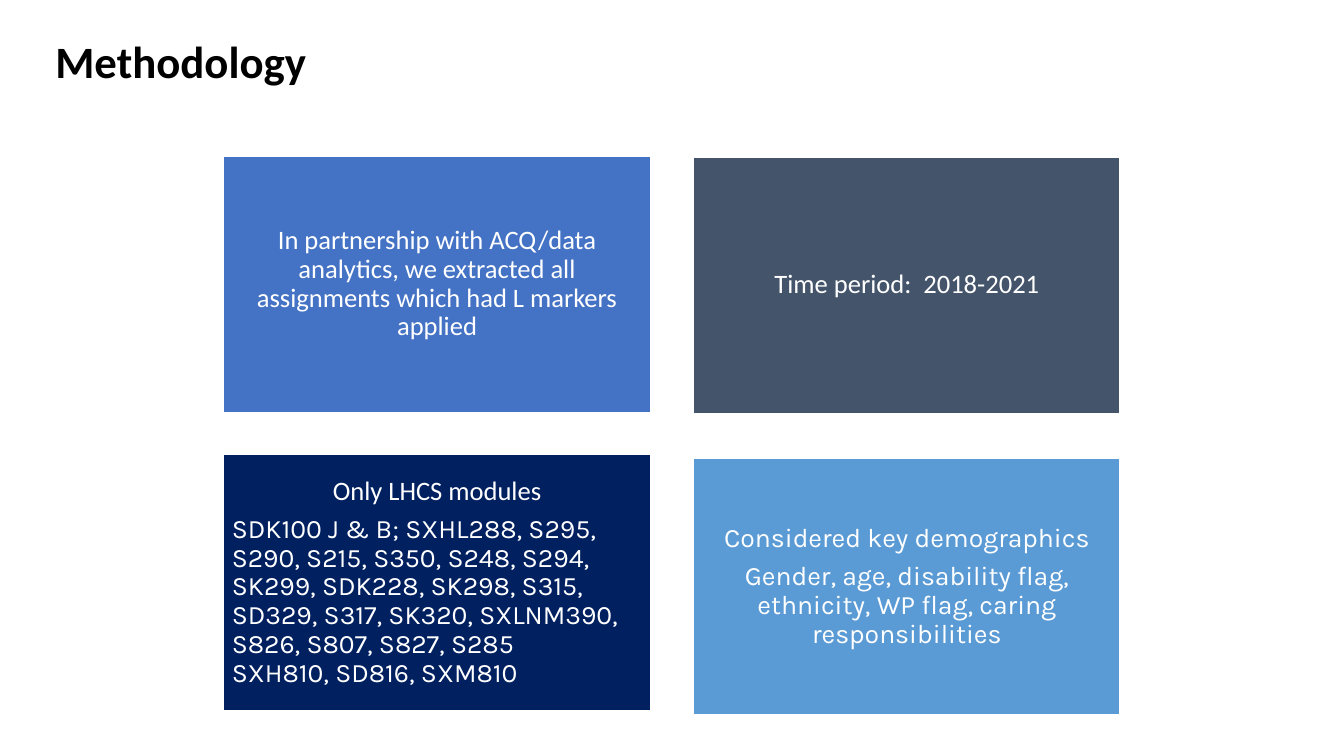
from dataclasses import dataclass

from pptx import Presentation
from pptx import util as u
from pptx.dml.color import RGBColor
from pptx.enum import shapes, text


@dataclass(frozen=True)
class Theme:
    ink: str = "000000"
    white: str = "FFFFFF"
    blue: str = "4472C4"
    slate: str = "44546A"
    navy: str = "002060"
    sky: str = "5B9BD5"
    main_font: str = "Calibri"
    alt_font: str = "Karla"
    title_size: float = 32
    body_size: float = 19


class Deck:
    def __init__(self, prs, theme):
        self.theme = theme
        self.s = prs.slides.add_slide(prs.slide_layouts[6])

    def style(self, p, font, size, color, bold=False):
        for r in p.runs:
            r.font.name = font
            r.font.size = u.Pt(size)
            r.font.bold = bold
            r.font.color.rgb = RGBColor.from_string(color)

    def title(self, words, left, top, width, height):
        sp = self.s.shapes.add_textbox(*map(u.Inches, (left, top, width, height)))
        tf = sp.text_frame
        tf.word_wrap = False
        tf.auto_size = text.MSO_AUTO_SIZE.SHAPE_TO_FIT_TEXT
        tf.text = words
        t = self.theme
        self.style(tf.paragraphs[0], t.main_font, t.title_size, t.ink, bold=True)

    def card(self, left, top, width, height, fill, paragraphs):
        """Draw a filled box; paragraphs holds (words, font, alignment) tuples."""
        t = self.theme
        sp = self.s.shapes.add_shape(
            shapes.MSO_SHAPE.RECTANGLE, *map(u.Inches, (left, top, width, height)))
        sp.shadow.inherit = False
        sp.fill.solid()
        sp.fill.fore_color.rgb = RGBColor.from_string(fill)
        sp.line.color.rgb = RGBColor.from_string(t.white)
        sp.line.width = u.Pt(1)
        tf = sp.text_frame
        tf.word_wrap = True
        tf.vertical_anchor = text.MSO_ANCHOR.MIDDLE
        tf.margin_left = tf.margin_right = u.Inches(0.08)
        tf.margin_top = tf.margin_bottom = u.Inches(0.08)
        for i, (words, font, align) in enumerate(paragraphs):
            p = tf.add_paragraph() if i else tf.paragraphs[0]
            p.text = words
            p.alignment = align
            p.line_spacing = 0.9
            p.space_after = u.Pt(0.35 * t.body_size)
            self.style(p, font, t.body_size, t.white)


def main():
    prs = Presentation()
    prs.slide_width, prs.slide_height = u.Inches(13.33), u.Inches(7.5)
    t = Theme()
    deck = Deck(prs, t)
    deck.title("Methodology", 0.45, 0.29, 2.71, 2.26)

    center, left = text.PP_ALIGN.CENTER, text.PP_ALIGN.LEFT
    col_1, col_2 = 2.22, 6.88
    modules = ("SDK100 J & B; SXHL288, S295, S290, S215, S350, S248, S294, "
               "SK299, SDK228, SK298, S315, SD329, S317, SK320, SXLNM390, "
               "S826, S807, S827, S285 \vSXH810, SD816, SXM810")
    cards = [
        (col_1, 1.55, t.blue, [
            ("In partnership with ACQ/data analytics, we extracted all "
             "assignments which had L markers applied", t.main_font, center)]),
        (col_2, 1.56, t.slate, [
            ("Time period:  2018-2021", t.main_font, center)]),
        (col_1, 4.51, t.navy, [
            ("Only LHCS modules", t.main_font, center),
            (modules, t.alt_font, left)]),
        (col_2, 4.55, t.sky, [
            ("Considered key demographics", t.alt_font, center),
            ("Gender, age, disability flag, ethnicity, WP flag, caring "
             "responsibilities", t.alt_font, center)]),
    ]
    for x, y, fill, paragraphs in cards:
        deck.card(x, y, 4.23, 2.54, fill, paragraphs)
    prs.save("out.pptx")


if __name__ == "__main__":
    main()
